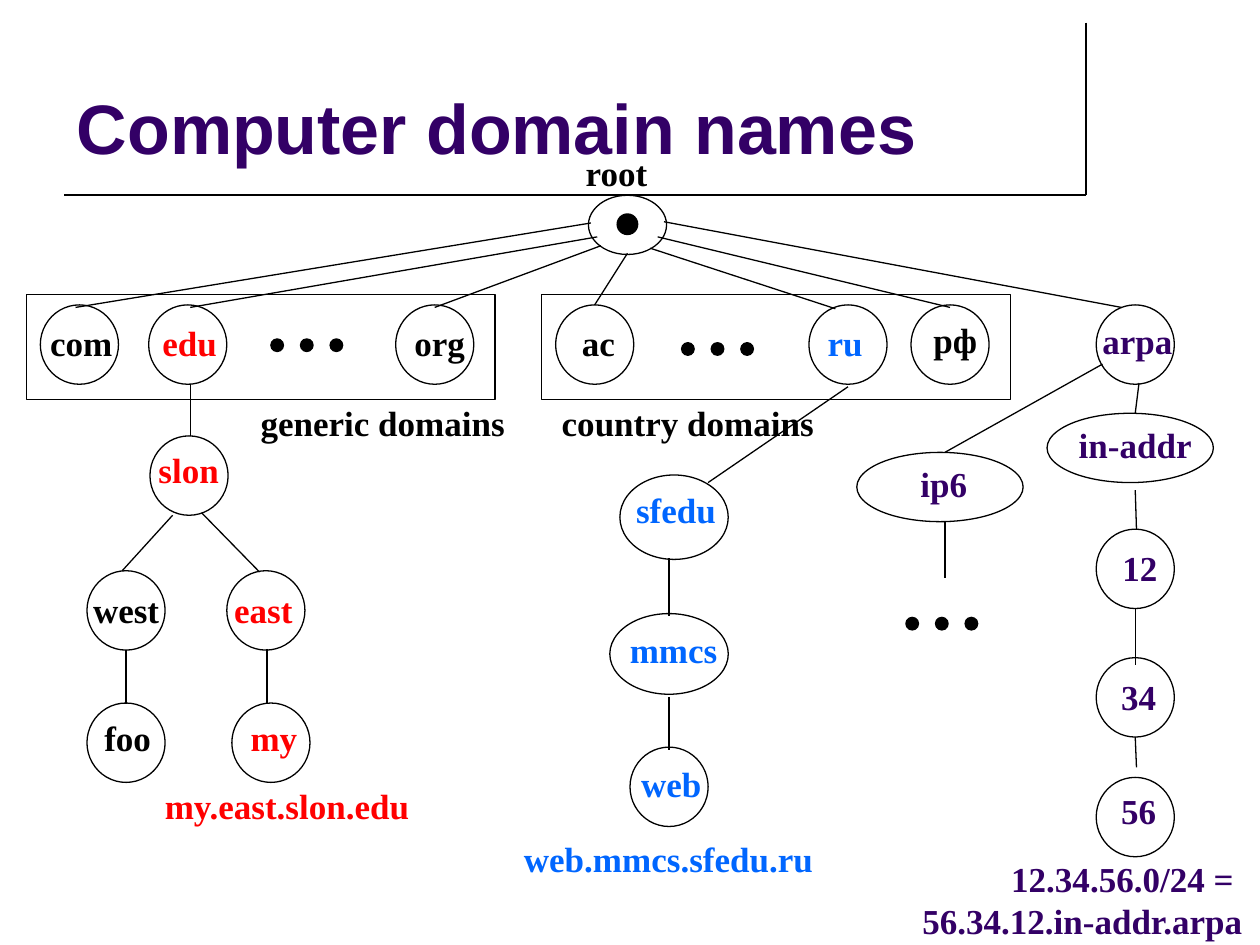
from lxml import etree
from pptx import Presentation
from pptx.dml.color import RGBColor
from pptx.enum import shapes, text
from pptx.oxml.ns import qn
from pptx.util import Inches, Pt

BLACK, RED, BLUE, PURPLE = "000000", "FF0000", "0066FF", "330066"
NODE_W, NODE_H = 0.62, 0.63
OVAL_W, OVAL_H = 1.32, 0.55
OVAL, RECT = shapes.MSO_SHAPE.OVAL, shapes.MSO_SHAPE.RECTANGLE
LEFT, CENTER, RIGHT = text.PP_ALIGN.LEFT, text.PP_ALIGN.CENTER, text.PP_ALIGN.RIGHT


def rgb(color):
    return RGBColor.from_string(color)


def format_text(tf, content, size=20, font="Times New Roman", color=BLACK,
                align=LEFT, spacing=None):
    for i, line in enumerate(content.split("\n")):
        p = tf.paragraphs[0] if i == 0 else tf.add_paragraph()
        p.alignment = align
        if spacing:
            p.line_spacing = spacing
        r = p.add_run()
        r.text = line
        r.font.size, r.font.name, r.font.bold = Pt(size), font, True
        r.font.color.rgb = rgb(color)


def add_label(slide, x, y, content, w=2.6, h=0.44, **fmt):
    sp = slide.shapes.add_textbox(Inches(x), Inches(y), Inches(w), Inches(h))
    tf = sp.text_frame
    tf.word_wrap = True
    if fmt.get("align", LEFT) == LEFT:
        tf.margin_right = 0
    format_text(tf, content, **fmt)


def add_outline(slide, kind, x, y, w, h, fill=None, width=0.75):
    sp = slide.shapes.add_shape(kind, Inches(x), Inches(y), Inches(w), Inches(h))
    sp.shadow.inherit = False
    if fill:
        sp.fill.solid()
        sp.fill.fore_color.rgb = rgb(fill)
    else:
        sp.fill.background()
    sp.line.color.rgb = rgb(BLACK)
    sp.line.width = Pt(width)


def add_line(slide, x1, y1, x2, y2, width=0.75):
    line = slide.shapes.add_connector(
        shapes.MSO_CONNECTOR.STRAIGHT, Inches(x1), Inches(y1), Inches(x2), Inches(y2))
    line.line.color.rgb = rgb(BLACK)
    line.line.width = Pt(width)
    etree.SubElement(line._element.spPr, qn("a:effectLst"))


def add_links(slide, left, top, links):
    for x1, y1, x2, y2 in links:
        add_line(slide, left + x1, top + y1, left + x2, top + y2)


def add_node(slide, x, y, name, dx, dy, color=BLACK, w=NODE_W, h=NODE_H):
    """Circle with its name, shifted by dx, dy from the circle's corner."""
    add_outline(slide, OVAL, x, y, w, h)
    add_label(slide, x + dx, y + dy, name, w=1.2, color=color)


def add_wide_node(slide, x, y, name, dx):
    add_outline(slide, OVAL, x, y, OVAL_W, OVAL_H)
    add_label(slide, x + dx, y + 0.1, name, w=1.42, color=PURPLE,
              align=CENTER, spacing=0.8)


def add_dots(slide, x, y):
    for i in range(3):
        add_outline(slide, OVAL, x + i * 0.235, y, 0.1, 0.1, fill=BLACK)


def draw_title(slide, left, top, width, height):
    title = slide.shapes.title
    title.left, title.top = Inches(left), Inches(top)
    title.width, title.height = Inches(width), Inches(height)
    tf = title.text_frame
    tf.vertical_anchor = text.MSO_ANCHOR.BOTTOM
    tf.auto_size = text.MSO_AUTO_SIZE.NONE
    format_text(tf, "Computer domain names", size=40, font="Arial", color=PURPLE)
    right, rule = left + width, top + 1.42
    add_line(slide, right, top + 0.05, right, rule, width=1)
    add_line(slide, left, rule, right, rule, width=1)


def draw_root(slide, left, top):
    add_outline(slide, OVAL, left, top, NODE_W, 0.47)
    add_outline(slide, OVAL, left + 0.23, top + 0.15, 0.16, 0.16, fill=BLACK, width=1)
    add_label(slide, left - 0.12, top - 0.4, "root", w=1.08)
    add_links(slide, left, top, [
        (0.02, 0.22, -4.07, 0.89), (0.07, 0.33, -3.16, 0.89),
        (0.1, 0.4, -1.22, 0.89), (0.31, 0.46, 0.05, 0.87),
        (0.49, 0.42, 1.96, 0.9), (0.55, 0.33, 2.87, 0.89),
        (0.6, 0.21, 4.23, 0.89)])


def draw_group(slide, left, top, nodes, dots, caption, caption_x):
    """Framed row of top-level domains with a caption below."""
    add_outline(slide, RECT, left, top, 3.72, 0.83)
    for x, name, dx, dy, color in nodes:
        add_node(slide, left + x, top + 0.08, name, dx, dy, color)
    add_dots(slide, left + dots[0], top + dots[1])
    add_label(slide, left + caption_x, top + 0.8, caption)


def draw_edu_branch(slide, left, top):
    for x, y, name, dx, dy, color in [
            (0.5, 0.41, "slon", -0.03, 0.05, RED),
            (0, 1.48, "west", -0.05, 0.09, BLACK),
            (1.11, 1.48, "east", -0.04, 0.09, RED),
            (0, 2.53, "foo", 0.04, 0.06, BLACK),
            (1.15, 2.53, "my", 0.05, 0.06, RED)]:
        add_node(slide, left + x, top + y, name, dx, dy, color)
    add_links(slide, left, top, [
        (0.82, 0, 0.82, 0.41), (0.68, 1.04, 0.28, 1.48), (0.91, 1.02, 1.37, 1.49),
        (0.31, 2.11, 0.31, 2.54), (1.43, 2.1, 1.43, 2.54)])
    add_label(slide, left + 0.52, top + 3.13, "my.east.slon.edu", color=RED)


def draw_ru_branch(slide, left, top):
    for x, y, name, dx, dy, w, h in [
            (0.86, 0.7, "sfedu", 0.03, 0.06, 0.86, 0.67),
            (0.78, 1.8, "mmcs", 0.06, 0.07, 0.94, 0.64),
            (0.94, 2.86, "web", -0.01, 0.07, NODE_W, NODE_H)]:
        add_node(slide, left + x, top + y, name, dx, dy, BLUE, w, h)
    add_links(slide, left, top, [
        (2.67, 0, 1.56, 0.76), (1.25, 1.36, 1.25, 1.82), (1.25, 2.46, 1.25, 2.88)])
    add_label(slide, left, top + 3.53, "web.mmcs.sfedu.ru", color=BLUE)


def draw_arpa_branch(slide, left, top):
    for y, name, dx, dy in [(0, "arpa", -0.05, 0.07), (1.78, "12", 0.11, 0.09),
                            (2.8, "34", 0.1, 0.09), (3.75, "56", 0.1, 0.05)]:
        add_node(slide, left + 1.9, top + y, name, dx, dy, PURPLE)
    add_wide_node(slide, left + 1.51, top + 0.86, "in-addr", -0.01)
    add_wide_node(slide, left, top + 1.17, "ip6", -0.02)
    add_links(slide, left, top, [
        (2.24, 0.62, 2.21, 0.86), (2.21, 1.47, 2.22, 1.78), (2.21, 2.41, 2.21, 2.86),
        (2.21, 3.43, 2.22, 3.67), (1.95, 0.47, 0.7, 1.17), (0.7, 1.72, 0.7, 2.17)])
    add_dots(slide, left + 0.39, top + 2.48)
    add_label(slide, left + 0.1, top + 4.34, "12.34.56.0/24 = \n56.34.12.in-addr.arpa",
              w=3.06, h=0.77, color=PURPLE, align=RIGHT)


def main():
    prs = Presentation()
    prs.slide_width, prs.slide_height = Inches(10), Inches(7.5)
    slide = prs.slides.add_slide(prs.slide_layouts[5])
    draw_title(slide, 0.51, 0.13, 8.11, 1.26)
    draw_root(slide, 4.67, 1.55)
    draw_group(slide, 0.21, 2.34, [
        (0.11, "com", -0.02, 0.08, BLACK), (0.97, "edu", 0.01, 0.08, RED),
        (2.93, "org", 0.05, 0.08, BLACK)], (1.94, 0.35), "generic domains", 1.76)
    draw_group(slide, 4.3, 2.34, [
        (0.11, "ac", 0.11, 0.08, BLACK), (2.12, "ru", 0.05, 0.08, BLUE),
        (2.93, "рф", 0.08, 0.06, BLACK)], (1.11, 0.38), "country domains", 0.06)
    draw_edu_branch(slide, 0.69, 3.05)
    draw_ru_branch(slide, 4.06, 3.07)
    draw_arpa_branch(slide, 6.8, 2.42)
    prs.save("out.pptx")


if __name__ == "__main__":
    main()
